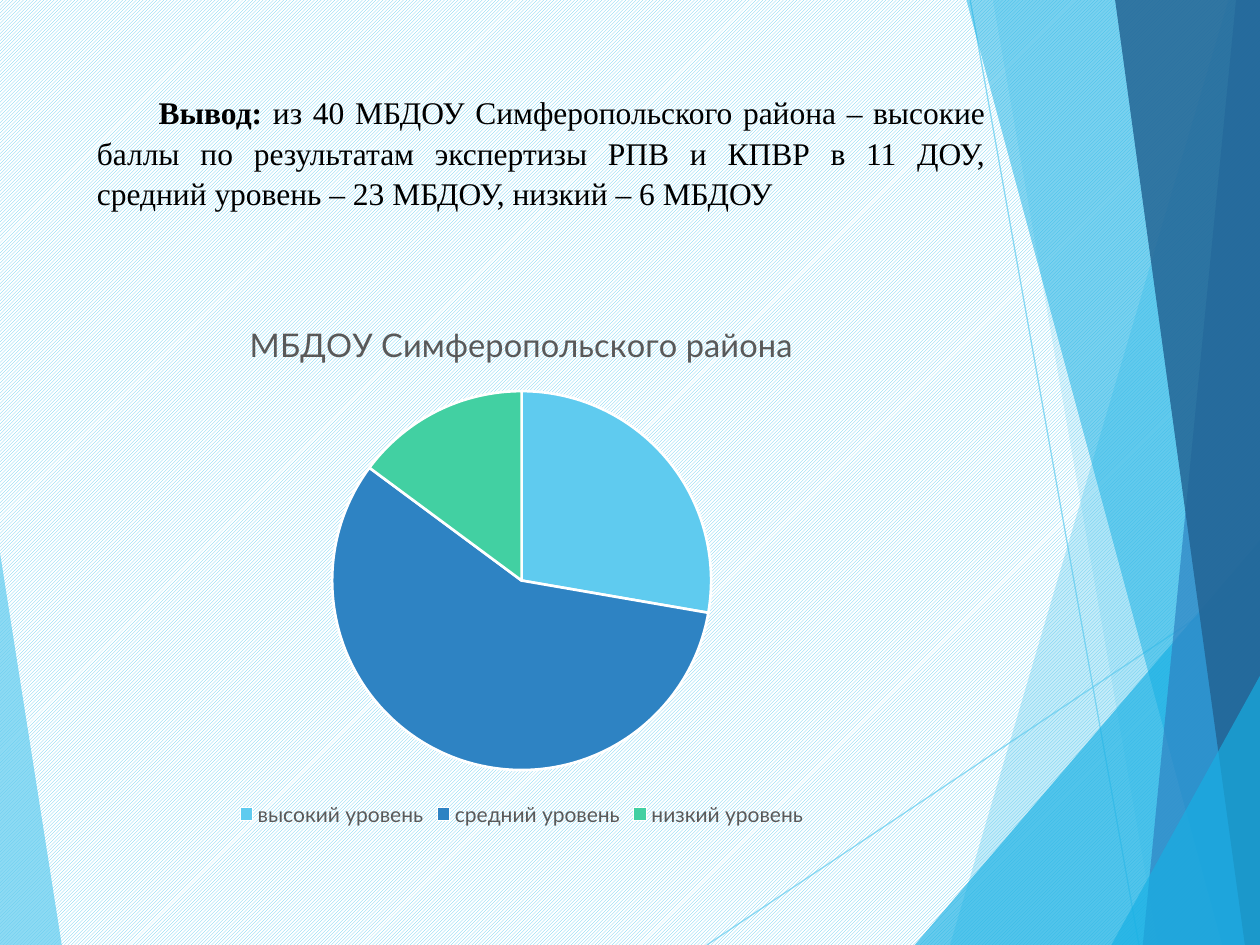
from dataclasses import dataclass

from lxml import etree
from pptx import Presentation
from pptx.chart.data import CategoryChartData
from pptx.dml.color import RGBColor
from pptx.enum.chart import XL_CHART_TYPE, XL_LEGEND_POSITION
from pptx.enum.dml import MSO_PATTERN
from pptx.enum.shapes import MSO_CONNECTOR
from pptx.enum.text import MSO_ANCHOR, PP_ALIGN
from pptx.oxml.ns import qn
from pptx.util import Inches, Pt

PIE = XL_CHART_TYPE.PIE
LEGEND_BOTTOM = XL_LEGEND_POSITION.BOTTOM
HATCH = MSO_PATTERN.LIGHT_UPWARD_DIAGONAL
STRAIGHT = MSO_CONNECTOR.STRAIGHT
TOP = MSO_ANCHOR.TOP
JUSTIFY = PP_ALIGN.JUSTIFY

SKY = RGBColor(0x5F, 0xCB, 0xEF)
CYAN = RGBColor(0x17, 0xB0, 0xE4)
BLUE = RGBColor(0x2E, 0x83, 0xC3)
NAVY = RGBColor(0x22, 0x62, 0x92)
GREEN = RGBColor(0x42, 0xD0, 0xA2)
GRAY = RGBColor(0x59, 0x59, 0x59)
BLACK = RGBColor(0, 0, 0)
WHITE = RGBColor(0xFF, 0xFF, 0xFF)

WIDTH, HEIGHT = Inches(10), Inches(7.5)
CHART_FONT = "Lato"
BODY_FONT = "Times New Roman"
DISTRICT = "МБДОУ Симферопольского района"
CONCLUSION = (
    "из 40 МБДОУ Симферопольского района – высокие баллы по результатам "
    "экспертизы РПВ и КПВР в 11 ДОУ, средний уровень – 23 МБДОУ, низкий – 6 МБДОУ"
)

Point = tuple[float, float]


@dataclass(frozen=True)
class Facet:
    corners: tuple[Point, ...]
    color: RGBColor
    opacity: int


@dataclass(frozen=True)
class Ray:
    start: Point
    end: Point


@dataclass(frozen=True)
class Level:
    label: str
    share: int
    color: RGBColor


BOTTOM_RIGHT = (100, 100)
TOP_RIGHT = (100, 0)

LEFT_FACET = Facet(((0, 58.5), (4.9, 100), (0, 100)), SKY, 70)
RAYS = (
    Ray((56.1, 100), (100, 60.9)),
    Ray((77, 0), (90.4, 100)),
)
RIGHT_FACETS = (
    Facet(((97.5, 0), (75.4, 100), BOTTOM_RIGHT, TOP_RIGHT), SKY, 36),
    Facet(((78.8, 0), (91.9, 100), BOTTOM_RIGHT, TOP_RIGHT), SKY, 20),
    Facet(((72.6, 100), (100, 57.2), BOTTOM_RIGHT), CYAN, 66),
    Facet(((76.7, 0), (97, 100), BOTTOM_RIGHT, TOP_RIGHT), CYAN, 50),
    Facet(((98.1, 0), (90.7, 100), BOTTOM_RIGHT, TOP_RIGHT), BLUE, 70),
    Facet(((88.5, 0), (98.8, 100), BOTTOM_RIGHT, TOP_RIGHT), NAVY, 82),
    Facet(((88.2, 100), (100, 71.5), BOTTOM_RIGHT), CYAN, 66),
)
LEVELS = (
    Level("высокий уровень", 28, SKY),
    Level("средний уровень", 58, BLUE),
    Level("низкий уровень", 15, GREEN),
)


def place(point: Point) -> tuple[int, int]:
    across, down = point
    return round(WIDTH * across / 100), round(HEIGHT * down / 100)


def set_opacity(element, percent: int) -> None:
    color = next(element.iter(qn("a:srgbClr")))
    etree.SubElement(color, qn("a:alpha")).set("val", str(percent * 1000))


def style_font(font, name: str, size: float, color: RGBColor, bold: bool = False) -> None:
    font.name = name
    font.size = Pt(size)
    font.bold = bold
    font.color.rgb = color


def draw_facet(slide, facet: Facet) -> None:
    first, *others = [place(corner) for corner in facet.corners]
    builder = slide.shapes.build_freeform(*first)
    builder.add_line_segments(others, close=True)
    shape = builder.convert_to_shape()
    shape.shadow.inherit = False
    shape.fill.solid()
    shape.fill.fore_color.rgb = facet.color
    set_opacity(shape.fill._xPr, facet.opacity)
    shape.line.fill.background()


def draw_ray(slide, ray: Ray) -> None:
    connector = slide.shapes.add_connector(STRAIGHT, *place(ray.start), *place(ray.end))
    connector.line.color.rgb = SKY
    connector.line.width = Pt(0.75)
    properties = connector._element.spPr
    set_opacity(properties, 70)
    etree.SubElement(properties, qn("a:effectLst"))


def draw_conclusion(slide) -> None:
    box = slide.shapes.add_textbox(*place((6.7, 8.93)), *place((72.5, 19.2)))
    frame = box.text_frame
    frame.word_wrap = True
    frame.vertical_anchor = TOP
    paragraph = frame.paragraphs[0]
    paragraph.alignment = JUSTIFY
    paragraph.line_spacing = 1.07
    properties = paragraph._p.get_or_add_pPr()
    properties.set("marL", "0")
    properties.set("indent", str(Inches(0.49)))
    for wording, bold in (("Вывод: ", True), (CONCLUSION, False)):
        run = paragraph.add_run()
        run.text = wording
        style_font(run.font, BODY_FONT, 18, BLACK, bold)


def draw_levels_chart(slide) -> None:
    data = CategoryChartData()
    data.categories = [level.label for level in LEVELS]
    data.add_series(DISTRICT, [level.share for level in LEVELS])
    chart = slide.shapes.add_chart(
        PIE, *place((6.7, 31.47)), *place((69.4, 56.53)), data
    ).chart
    style_font(chart.font, CHART_FONT, 10, BLACK)

    chart.has_title = True
    title = chart.chart_title
    title.include_in_layout = False
    title.text_frame.text = DISTRICT
    style_font(title.text_frame.paragraphs[0].runs[0].font, CHART_FONT, 18.6, GRAY)

    chart.has_legend = True
    chart.legend.position = LEGEND_BOTTOM
    chart.legend.include_in_layout = False
    style_font(chart.legend.font, CHART_FONT, 12, GRAY)

    plot = chart.plots[0]
    plot.vary_by_categories = True
    for index, level in enumerate(LEVELS):
        sector = plot.series[0].points[index].format
        sector.fill.solid()
        sector.fill.fore_color.rgb = level.color
        sector.line.color.rgb = WHITE
        sector.line.width = Pt(1.5)


def main() -> None:
    presentation = Presentation()
    presentation.slide_width = WIDTH
    presentation.slide_height = HEIGHT
    slide = presentation.slides.add_slide(presentation.slide_layouts[6])

    background = slide.background.fill
    background.patterned()
    background.pattern = HATCH
    background.fore_color.rgb = SKY
    background.back_color.rgb = WHITE

    draw_facet(slide, LEFT_FACET)
    for ray in RAYS:
        draw_ray(slide, ray)
    for facet in RIGHT_FACETS:
        draw_facet(slide, facet)
    draw_conclusion(slide)
    draw_levels_chart(slide)
    presentation.save("out.pptx")


if __name__ == "__main__":
    main()
